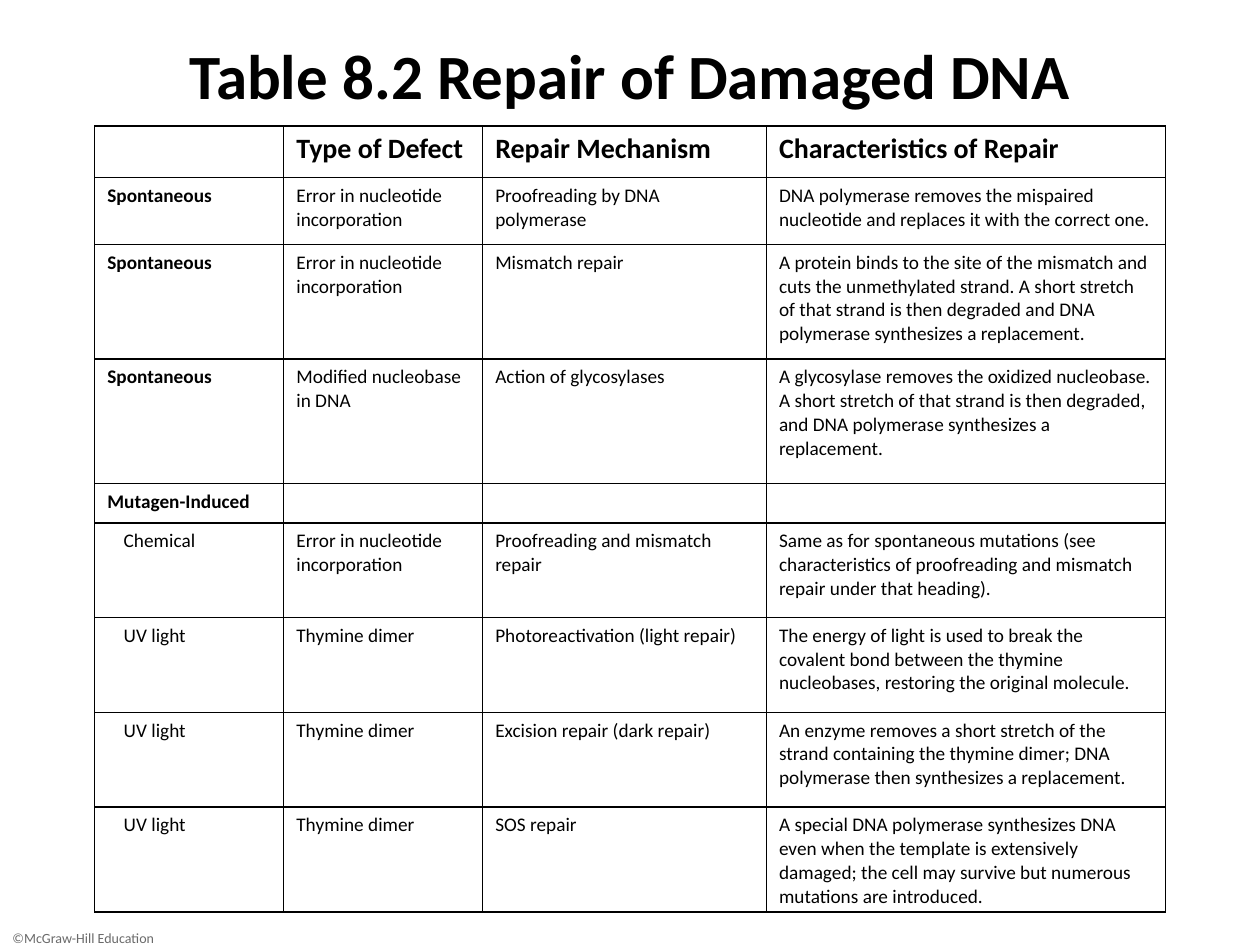
from lxml import etree
from pptx import Presentation
from pptx.dml.color import RGBColor
from pptx.enum.text import MSO_ANCHOR, PP_ALIGN
from pptx.oxml.ns import qn
from pptx.util import Cm, Pt

MIDDLE = MSO_ANCHOR.MIDDLE
CENTER = PP_ALIGN.CENTER
BLACK = RGBColor(0x00, 0x00, 0x00)
GRAY = RGBColor(0x6A, 0x6A, 0x6A)
FONT = "Calibri"

WIDTHS = [3.81, 4.01, 5.72, 8.05]
HEIGHTS = [1.04, 1.35, 2.31, 2.51, 0.79, 1.91, 1.91, 1.91, 2.11]
INDENT = 0.33
ROWS = [
    ["", "Type of Defect", "Repair Mechanism", "Characteristics of Repair"],
    ["Spontaneous", "Error in nucleotide incorporation", "Proofreading by DNA polymerase",
     "DNA polymerase removes the mispaired nucleotide and replaces it with the correct one."],
    ["Spontaneous", "Error in nucleotide incorporation", "Mismatch repair",
     "A protein binds to the site of the mismatch and cuts the unmethylated strand. "
     "A short stretch of that strand is then degraded and DNA polymerase synthesizes "
     "a replacement."],
    ["Spontaneous", "Modified nucleobase in DNA", "Action of glycosylases",
     "A glycosylase removes the oxidized nucleobase. A short stretch of that strand is "
     "then degraded, and DNA polymerase synthesizes a replacement."],
    ["Mutagen-Induced", "", "", ""],
    ["Chemical", "Error in nucleotide incorporation", "Proofreading and mismatch repair",
     "Same as for spontaneous mutations (see characteristics of proofreading and "
     "mismatch repair under that heading)."],
    ["UV light", "Thymine dimer", "Photoreactivation (light repair)",
     "The energy of light is used to break the covalent bond between the thymine "
     "nucleobases, restoring the original molecule."],
    ["UV light", "Thymine dimer", "Excision repair (dark repair)",
     "An enzyme removes a short stretch of the strand containing the thymine dimer; "
     "DNA polymerase then synthesizes a replacement."],
    ["UV light", "Thymine dimer", "SOS repair",
     "A special DNA polymerase synthesizes DNA even when the template is extensively "
     "damaged; the cell may survive but numerous mutations are introduced."],
]
GROUP = 4


def write(frame, text, size, color=BLACK, bold=False):
    frame.text = text
    para = frame.paragraphs[0]
    for run in para.runs:
        font = run.font
        font.name, font.size, font.bold = FONT, Pt(size), bold
        font.color.rgb = color
    if not text:
        end = etree.SubElement(para._p, qn("a:endParaRPr"))
        end.set("sz", str(size * 100))
    return para


def border(cell):
    props = cell._tc.get_or_add_tcPr()
    for side in ("L", "R", "T", "B"):
        line = etree.SubElement(props, qn(f"a:ln{side}"), w=str(Pt(1)))
        fill = etree.SubElement(line, qn("a:solidFill"))
        etree.SubElement(fill, qn("a:srgbClr"), val=str(BLACK))


def add_title(slide, text):
    title = slide.shapes.title
    title.left, title.top = Cm(0), Cm(0.64)
    title.width, title.height = Cm(25.4), Cm(1.7)
    frame = title.text_frame
    frame.vertical_anchor = MIDDLE
    write(frame, text, 36, bold=True).alignment = CENTER


def add_grid(slide):
    frame = slide.shapes.add_table(
        len(ROWS), len(WIDTHS), Cm(1.91), Cm(2.54), Cm(sum(WIDTHS)), Cm(sum(HEIGHTS)))
    table = frame.table
    table.first_row = table.horz_banding = False
    for col, width in zip(table.columns, WIDTHS):
        col.width = Cm(width)
    for i, (row, height, texts) in enumerate(zip(table.rows, HEIGHTS, ROWS)):
        row.height = Cm(height)
        for j, (cell, text) in enumerate(zip(row.cells, texts)):
            border(cell)
            cell.fill.background()
            head = i == 0
            label = j == 0 and i <= GROUP
            para = write(cell.text_frame, text, 16 if head else 11, bold=head or label)
            if j == 0 and i > GROUP:
                para._p.get_or_add_pPr().set("marL", str(Cm(INDENT)))


def add_credit(slide, text):
    box = slide.shapes.add_textbox(Cm(0), Cm(18.62), Cm(3.81), Cm(0.43))
    box.text_frame.word_wrap = True
    write(box.text_frame, text, 8, GRAY)


def main():
    deck = Presentation()
    deck.slide_width, deck.slide_height = Cm(25.4), Cm(19.05)
    slide = deck.slides.add_slide(deck.slide_layouts[5])
    add_credit(slide, "©McGraw-Hill Education")
    add_title(slide, "Table 8.2 Repair of Damaged DNA")
    add_grid(slide)
    deck.save("out.pptx")


if __name__ == "__main__":
    main()
